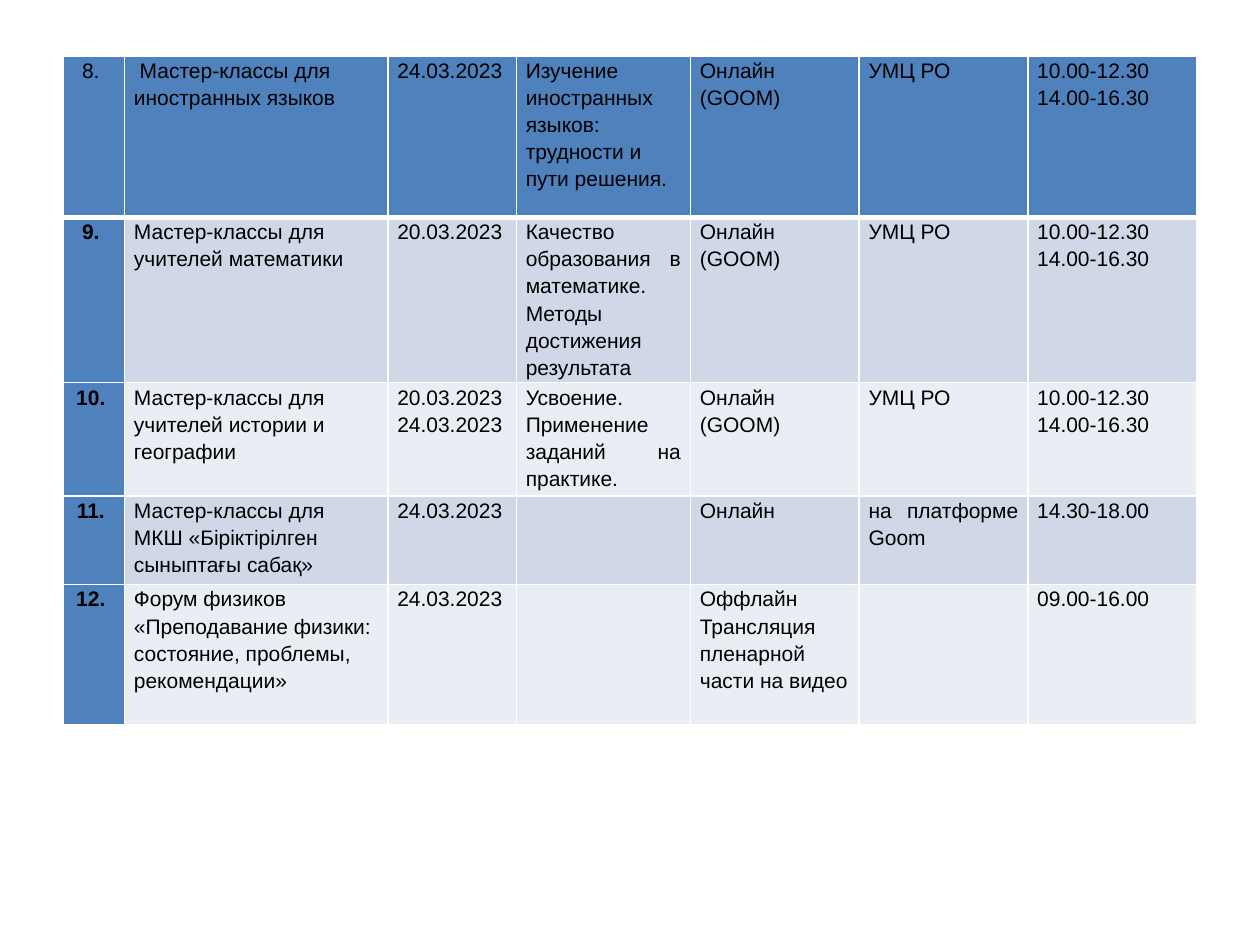
import pptx
import pptx.dml.color
import pptx.enum.text
import pptx.oxml
import pptx.oxml.ns
import pptx.util
from pptx.util import Cm

ALIGN = pptx.enum.text.PP_ALIGN
BLUE, PALE, LIGHT, WHITE, BLACK = "4F81BD", "D0D8E8", "E9EDF4", "FFFFFF", "000000"

COLUMN_WIDTHS = [1.24, 5.31, 2.59, 3.51, 3.4, 3.4, 3.4]
ROW_HEIGHTS = [3.25, 3.33, 2.29, 1.78, 2.82]
TWO_SESSIONS = "10.00-12.30\n14.00-16.30"

# Number, event, date, topic, format, venue, time
EVENTS = [
    ["8. ", " Мастер-классы для иностранных языков", "24.03.2023",
     "Изучение иностранных языков: трудности и пути решения.",
     "Онлайн (GOOM)", "УМЦ РО", TWO_SESSIONS],
    ["9. ", "Мастер-классы для учителей математики", "20.03.2023",
     "Качество образования в математике. Методы достижения результата",
     "Онлайн (GOOM)", "УМЦ РО", TWO_SESSIONS],
    ["10. ", "Мастер-классы для учителей истории и географии",
     "20.03.2023\n24.03.2023", "Усвоение. Применение заданий на практике.",
     "Онлайн (GOOM)", "УМЦ РО", TWO_SESSIONS],
    ["11. ", "Мастер-классы для МКШ «Біріктірілген сыныптағы сабақ»",
     "24.03.2023", "", "Онлайн", "на платформе Goom", "14.30-18.00"],
    ["12. ", "Форум физиков «Преподавание физики:\n"
     "состояние, проблемы, рекомендации»", "24.03.2023", "",
     "Оффлайн\nТрансляция пленарной части на видео", "", "09.00-16.00"],
]
LEFT_ALIGNED = {(0, 3), (4, 2), (4, 6)}


def colour(code):
    return pptx.dml.color.RGBColor.from_string(code)


class SlideBuilder:
    font_name = "Arial"
    font_size = pptx.util.Pt(12)
    line_spacing = 1.15
    side_margin = Cm(0.19)

    def __init__(self, page):
        self.page = page

    def table(self, left, top, widths, heights):
        frame = self.page.shapes.add_table(
            len(heights), len(widths), Cm(left), Cm(top),
            Cm(sum(widths)), Cm(sum(heights)))
        table = frame.table
        table.first_row = table.horz_banding = False
        for column, width in zip(table.columns, widths):
            column.width = Cm(width)
        for row, height in zip(table.rows, heights):
            row.height = Cm(height)
        return table

    def cell(self, cell, text, fill, align, bold=False):
        cell.margin_left = cell.margin_right = self.side_margin
        cell.margin_top = cell.margin_bottom = 0
        cell.text = text
        for para in cell.text_frame.paragraphs:
            para.alignment = align
            para.line_spacing = self.line_spacing
            para.font.name = self.font_name
            para.font.size = self.font_size
            para.font.bold = bold
            para.font.color.rgb = colour(BLACK)
        cell.fill.solid()
        cell.fill.fore_color.rgb = colour(fill)

    def borders(self, cell, **points):
        properties = cell._tc.get_or_add_tcPr()
        for index, side in enumerate("LRTB"):
            width = pptx.util.Pt(points.get(side, 1))
            line = pptx.oxml.parse_xml(
                f'<a:ln{side} {pptx.oxml.ns.nsdecls("a")} w="{width}"><a:solidFill>'
                f'<a:srgbClr val="{WHITE}"/></a:solidFill></a:ln{side}>')
            properties.insert(index, line)


def main():
    deck = pptx.Presentation()
    deck.slide_width, deck.slide_height = Cm(25.4), Cm(19.05)
    builder = SlideBuilder(deck.slides.add_slide(deck.slide_layouts[6]))

    # Schedule: blue first row and first column, banded body
    schedule = builder.table(1.27, 1.13, COLUMN_WIDTHS, ROW_HEIGHTS)
    for row, event in enumerate(EVENTS):
        band = PALE if row % 2 else LIGHT
        for column, text in enumerate(event):
            if column == 0:
                align = ALIGN.CENTER
            elif column == 1 or (row, column) in LEFT_ALIGNED:
                align = ALIGN.LEFT
            else:
                align = ALIGN.JUSTIFY
            cell = schedule.cell(row, column)
            builder.cell(cell, text, BLUE if row == 0 or column == 0 else band,
                         align, bold=row > 0 and column == 0)
            # Thick rule between the first row and the body
            builder.borders(cell, T=3 if row == 1 else 1, B=3 if row == 0 else 1)

    deck.save("out.pptx")


if __name__ == "__main__":
    main()
